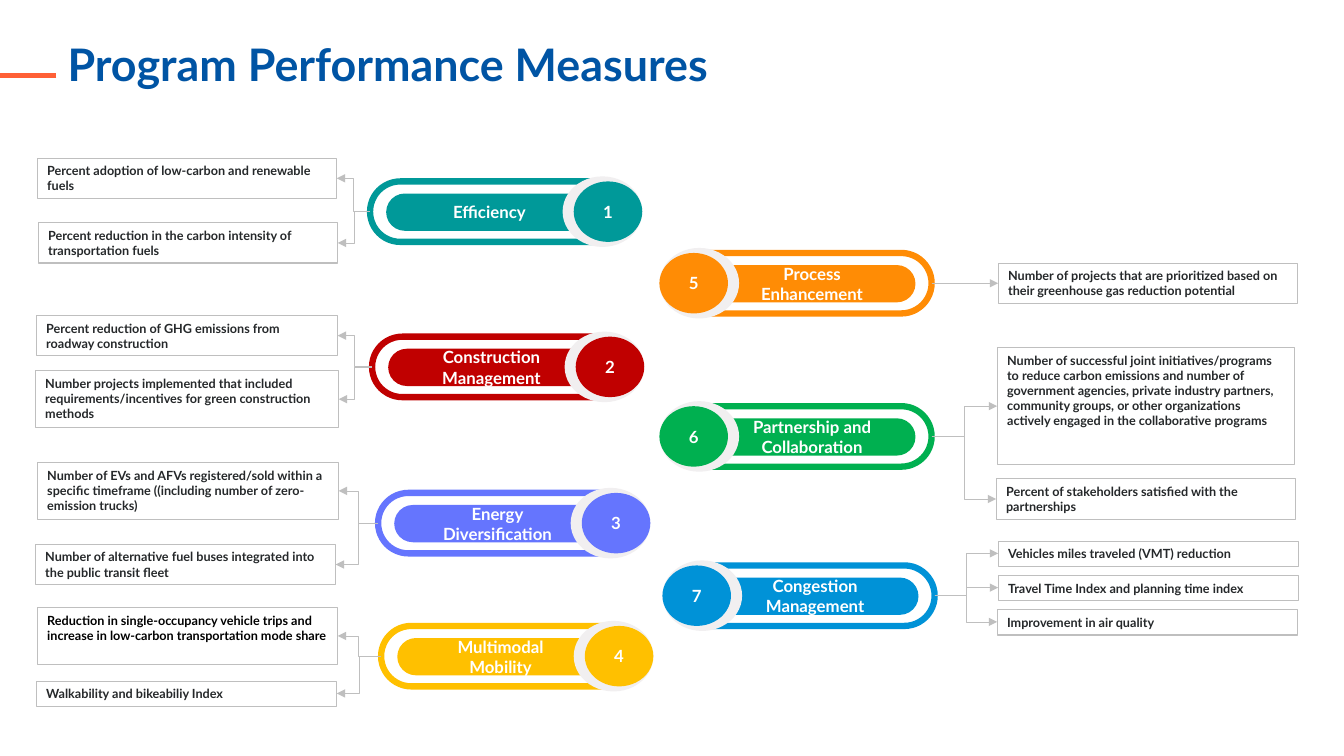
from lxml import etree
from pptx import Presentation
from pptx.dml.color import RGBColor
from pptx.enum.shapes import MSO_CONNECTOR, MSO_SHAPE
from pptx.enum.text import MSO_ANCHOR, PP_ALIGN
from pptx.oxml.ns import qn
from pptx.util import Pt

PX = 9144  # 100 px to the inch
ROUNDED, OVAL, RECTANGLE = MSO_SHAPE.ROUNDED_RECTANGLE, MSO_SHAPE.OVAL, MSO_SHAPE.RECTANGLE
STRAIGHT, ELBOW = MSO_CONNECTOR.STRAIGHT, MSO_CONNECTOR.ELBOW
FONT = "Lato"
WHITE, GREY, HALO, INK, BLACK = "FFFFFF", "BFBFBF", "F1EFF0", "25282A", "000000"
RING_WIDTH, RING_HEIGHT = 261, 60

# Number, label, colour, on left side, ring left, ring top, connector turn,
# boxes as (left, top, width, height, text colour, text)
MEASURES = [
    (1, "Efficiency", "009999", True, 367, 180, 351, [
        (37, 157, 297, 40, INK, "Percent adoption of low-carbon and renewable fuels"),
        (38, 221, 297, 40, INK, "Percent reduction in the carbon intensity of transportation fuels")]),
    (2, "Construction Management", "C00000", True, 369, 334, 352, [
        (36, 313, 299, 40, INK, "Percent reduction of GHG emissions from roadway construction"),
        (35, 368, 301, 56, INK, "Number projects implemented that included "
         "requirements/incentives for green construction methods")]),
    (3, "Energy\nDiversification", "6575FE", True, 375, 489, 355, [
        (37, 459, 299, 56, INK, "Number of EVs and AFVs registered/sold within a specific "
         "timeframe ((including number of zero-emission trucks)"),
        (35, 540, 298, 40, INK, "Number of alternative fuel buses integrated into "
         "the public transit fleet")]),
    (4, "Multimodal\nMobility", "FFC000", True, 378, 621, 356, [
        (37, 603, 298, 56, BLACK, "Reduction in single-occupancy vehicle trips and "
         "increase in low-carbon transportation mode share"),
        (36, 676, 298, 25, INK, "Walkability and bikeabiliy Index")]),
    (5, "Process\nEnhancement", "FF8C05", False, 663, 251, 957, [
        (990, 261, 297, 40, INK, "Number of projects that are prioritized based on "
         "their greenhouse gas reduction potential")]),
    (6, "Partnership and Collaboration", "00B050", False, 663, 403, 956, [
        (989, 345, 295, 116, INK, "Number of successful joint initiatives/programs to reduce "
         "carbon emissions and number of government agencies, private industry partners, "
         "community groups, or other organizations actively engaged in the "
         "collaborative programs"),
        (988, 475, 297, 40, INK, "Percent of stakeholders satisfied with the partnerships")]),
    (7, "Congestion Management", "0092D7", False, 666, 561, 958, [
        (990, 537, 298, 25, INK, "Vehicles miles traveled (VMT) reduction"),
        (990, 571, 298, 25, INK, "Travel Time Index and planning time index"),
        (989, 605, 298, 25, INK, "Improvement in air quality")]),
]

presentation = Presentation()
presentation.slide_width, presentation.slide_height = 1333 * PX, 750 * PX
slide = presentation.slides.add_slide(presentation.slide_layouts[6])


def rgb(colour):
    return RGBColor.from_string(colour)


def add_block(kind, box, fill=None, line=None, text="", size=12, colour=WHITE, centred=True):
    """Add a preset shape; line is a (colour, points) pair."""
    shape = slide.shapes.add_shape(kind, *(value * PX for value in box))
    shape.shadow.inherit = False
    if kind == ROUNDED:
        shape.adjustments[0] = 0.5
    if fill:
        shape.fill.solid()
        shape.fill.fore_color.rgb = rgb(fill)
    else:
        shape.fill.background()
    if line:
        shape.line.color.rgb, shape.line.width = rgb(line[0]), Pt(line[1])
    else:
        shape.line.fill.background()
    frame = shape.text_frame
    frame.word_wrap = True
    frame.vertical_anchor = MSO_ANCHOR.MIDDLE if centred else MSO_ANCHOR.TOP
    frame.text = text
    for paragraph in frame.paragraphs:
        paragraph.alignment = PP_ALIGN.CENTER if centred else PP_ALIGN.LEFT
        paragraph.font.name, paragraph.font.size = FONT, Pt(size)
        paragraph.font.bold, paragraph.font.color.rgb = True, rgb(colour)


def add_line(kind, start, end, colour, points):
    connector = slide.shapes.add_connector(kind, *(value * PX for value in start + end))
    connector.line.color.rgb, connector.line.width = rgb(colour), Pt(points)
    etree.SubElement(connector._element.spPr, qn("a:effectLst"))
    return connector


# Title and accent line
add_line(STRAIGHT, (56, 75), (0, 75), "FF6036", 3.5)
title = slide.shapes.add_textbox(67 * PX, 42 * PX, 1200 * PX, 92 * PX).text_frame
title.word_wrap = True
title.margin_left = title.margin_right = title.margin_top = title.margin_bottom = 0
title.text = "Program Performance Measures"
heading = title.paragraphs[0]
heading.line_spacing = 0.9
heading.font.name, heading.font.size = FONT, Pt(32)
heading.font.bold, heading.font.color.rgb = True, rgb("0054A4")

for number, label, colour, on_left, left, top, turn, boxes in MEASURES:
    # Pill: ring, body, halo and number disc, mirrored on the right side
    for kind, offset, drop, width, height, fill, line, text in [
        (ROUNDED, 0, 0, RING_WIDTH, RING_HEIGHT, None, (colour, 4.5), ""),
        (ROUNDED, 16, 12, 205, 37, colour, None, label),
        (OVAL, 191, -5, 79, 70, HALO, None, ""),
        (OVAL, 202, 0, 68, 60, colour, None, str(number)),
    ]:
        part_left = left + (offset if on_left else RING_WIDTH - offset - width)
        add_block(kind, (part_left, top + drop, width, height), fill, line, text)

    # Measure boxes, each with an arrow from the pill
    start = (left if on_left else left + RING_WIDTH, top + RING_HEIGHT // 2)
    for box_left, box_top, width, height, ink, text in boxes:
        add_block(RECTANGLE, (box_left, box_top, width, height), None, (GREY, 0.75),
                  text, 9, ink, False)
        end = (box_left + width if on_left else box_left, box_top + height // 2)
        level = start[1] == end[1]
        arrow = add_line(STRAIGHT if level else ELBOW, start, end, GREY, 0.5)
        etree.SubElement(arrow.line._get_or_add_ln(), qn("a:tailEnd"), type="triangle")
        if not level:
            share = round(100000 * (turn - start[0]) / (end[0] - start[0]))
            guides = arrow._element.spPr.find(qn("a:prstGeom")).get_or_add_avLst()
            etree.SubElement(guides, qn("a:gd"), name="adj1", fmla=f"val {share}")

presentation.save("out.pptx")
